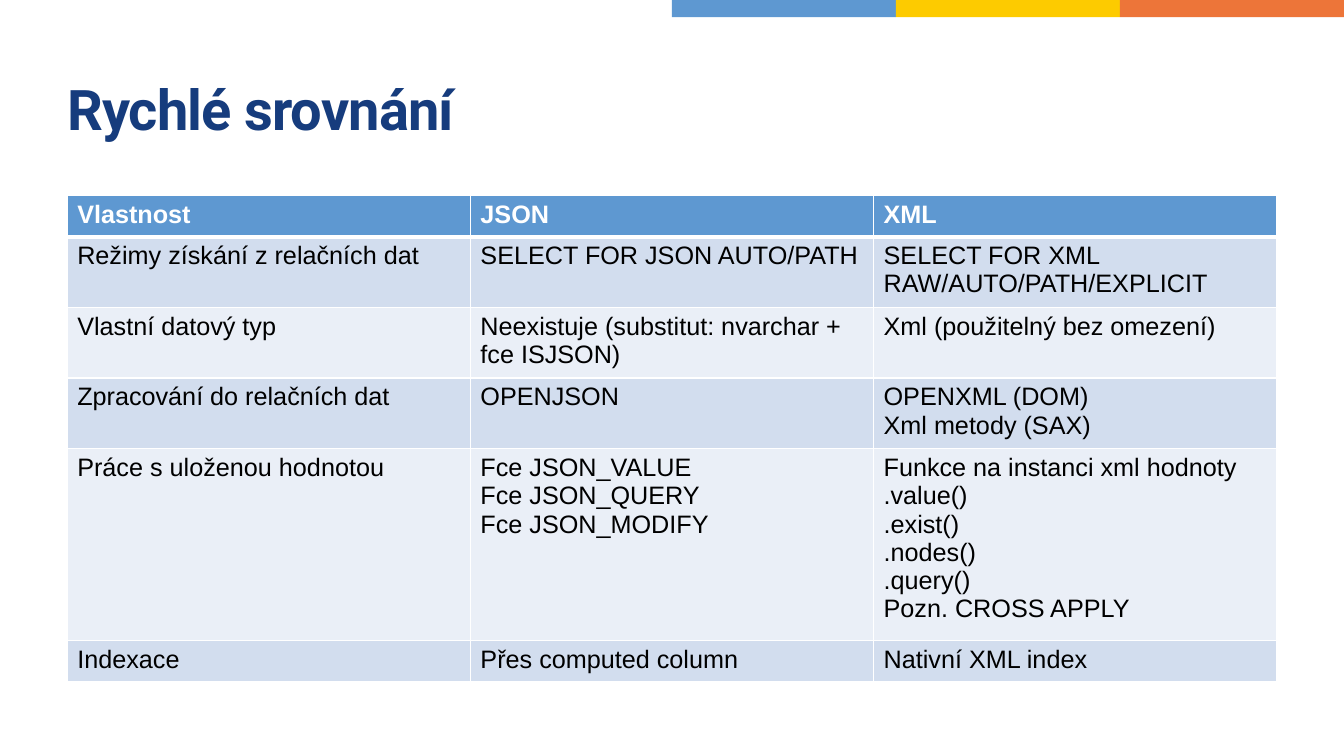
from lxml import etree
from pptx import Presentation
from pptx.dml.color import RGBColor
from pptx.enum.shapes import MSO_SHAPE
from pptx.enum.text import MSO_ANCHOR
from pptx.oxml.ns import qn
from pptx.util import Inches, Pt

RECTANGLE = MSO_SHAPE.RECTANGLE
MIDDLE = MSO_ANCHOR.MIDDLE

TITLE = "Rychlé srovnání"
COMPARISON = [
    (["Vlastnost"], ["JSON"], ["XML"]),
    (["Režimy získání z relačních dat"], ["SELECT FOR JSON AUTO/PATH"],
     ["SELECT FOR XML RAW/AUTO/PATH/EXPLICIT"]),
    (["Vlastní datový typ"], ["Neexistuje (substitut: nvarchar + fce ISJSON)"],
     ["Xml (použitelný bez omezení)"]),
    (["Zpracování do relačních dat"], ["OPENJSON"], ["OPENXML (DOM)", "Xml metody (SAX)"]),
    (["Práce s uloženou hodnotou"], ["Fce JSON_VALUE", "Fce JSON_QUERY", "Fce JSON_MODIFY"],
     ["Funkce na instanci xml hodnoty", ".value()", ".exist()", ".nodes()", ".query()",
      "Pozn. CROSS APPLY"]),
    (["Indexace"], ["Přes computed column"], ["Nativní XML index"]),
]
STRIPE_COLOURS = ["5E98D1", "FDCB00", "ED7539"]
HEADER_FILL, BAND_FILLS = "5E98D1", ["EAEFF7", "D2DDEE"]
WHITE, BLACK, NAVY = "FFFFFF", "000000", "163C7D"

SLIDE_W, SLIDE_H = 13.33, 7.5
MARGIN = SLIDE_W / 20
CONTENT_W = SLIDE_W - 2 * MARGIN
STRIPE_W, STRIPE_H = SLIDE_W / 6, 0.17
TITLE_TOP, TITLE_H = 0.45, 1.25
TABLE_TOP, ROW_H = 1.94, 0.41


def colour(hex_code):
    """Return the colour for a hex string."""
    return RGBColor.from_string(hex_code)


def add_run(paragraph, wording, font_name, size, hex_code, bold):
    """Append one formatted run to a paragraph."""
    run = paragraph.add_run()
    run.text = wording
    run.font.name, run.font.size, run.font.bold = font_name, Pt(size), bold
    run.font.color.rgb = colour(hex_code)
    return run


def add_stripes(slide):
    """Draw the coloured stripes along the right half of the top edge."""
    for index, stripe_colour in enumerate(STRIPE_COLOURS):
        stripe = slide.shapes.add_shape(
            RECTANGLE, Inches(SLIDE_W / 2 + index * STRIPE_W), 0,
            Inches(STRIPE_W), Inches(STRIPE_H))
        stripe.shadow.inherit = False
        stripe.fill.solid()
        stripe.fill.fore_color.rgb = colour(stripe_colour)
        stripe.line.fill.background()


def add_title(slide):
    """Place the slide heading."""
    heading = slide.shapes.add_textbox(
        Inches(MARGIN), Inches(TITLE_TOP), Inches(CONTENT_W), Inches(TITLE_H)).text_frame
    heading.word_wrap = True
    heading.vertical_anchor = MIDDLE
    heading.margin_left = heading.margin_right = 0
    heading.margin_top = heading.margin_bottom = 0
    run = add_run(heading.paragraphs[0], TITLE, "Roboto", 40, NAVY, True)
    run.font._element.set("spc", "-60")


def add_borders(cell, top, bottom):
    """Give a cell white borders with the given top and bottom widths."""
    properties = cell._tc.get_or_add_tcPr()
    widths = {"a:lnL": 1, "a:lnR": 1, "a:lnT": top, "a:lnB": bottom}
    for position, (side, width) in enumerate(widths.items()):
        border = etree.Element(qn(side), w=str(Pt(width)))
        fill = etree.SubElement(border, qn("a:solidFill"))
        etree.SubElement(fill, qn("a:srgbClr"), val=WHITE)
        properties.insert(position, border)


def add_comparison(slide):
    """Build the comparison table with a header and banded rows."""
    row_count, column_count = len(COMPARISON), len(COMPARISON[0])
    table = slide.shapes.add_table(
        row_count, column_count, Inches(MARGIN), Inches(TABLE_TOP),
        Inches(CONTENT_W), Inches(ROW_H * row_count)).table
    for row, features in enumerate(COMPARISON):
        is_header = row == 0
        for column, lines in enumerate(features):
            cell = table.cell(row, column)
            cell.fill.solid()
            cell.fill.fore_color.rgb = colour(HEADER_FILL if is_header else BAND_FILLS[row % 2])
            add_borders(cell, 3 if row == 1 else 1, 3 if is_header else 1)
            for number, line in enumerate(lines):
                body = cell.text_frame
                paragraph = body.add_paragraph() if number else body.paragraphs[0]
                add_run(paragraph, line, "Arial", 18, WHITE if is_header else BLACK, is_header)


def main():
    """Build and save the slide."""
    deck = Presentation()
    deck.slide_width, deck.slide_height = Inches(SLIDE_W), Inches(SLIDE_H)
    slide = deck.slides.add_slide(deck.slide_layouts[6])
    add_stripes(slide)
    add_title(slide)
    add_comparison(slide)
    deck.save("out.pptx")


if __name__ == "__main__":
    main()
